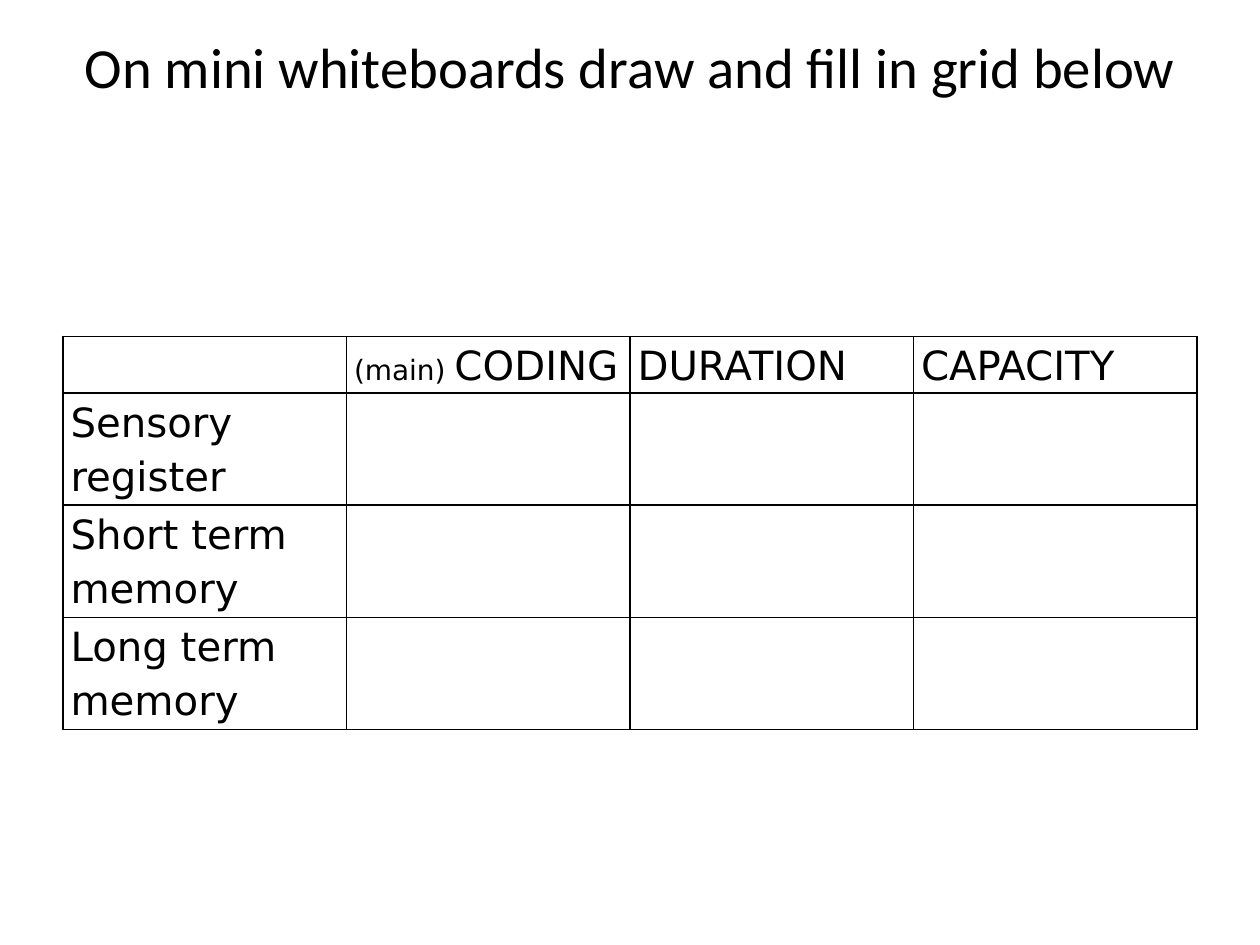
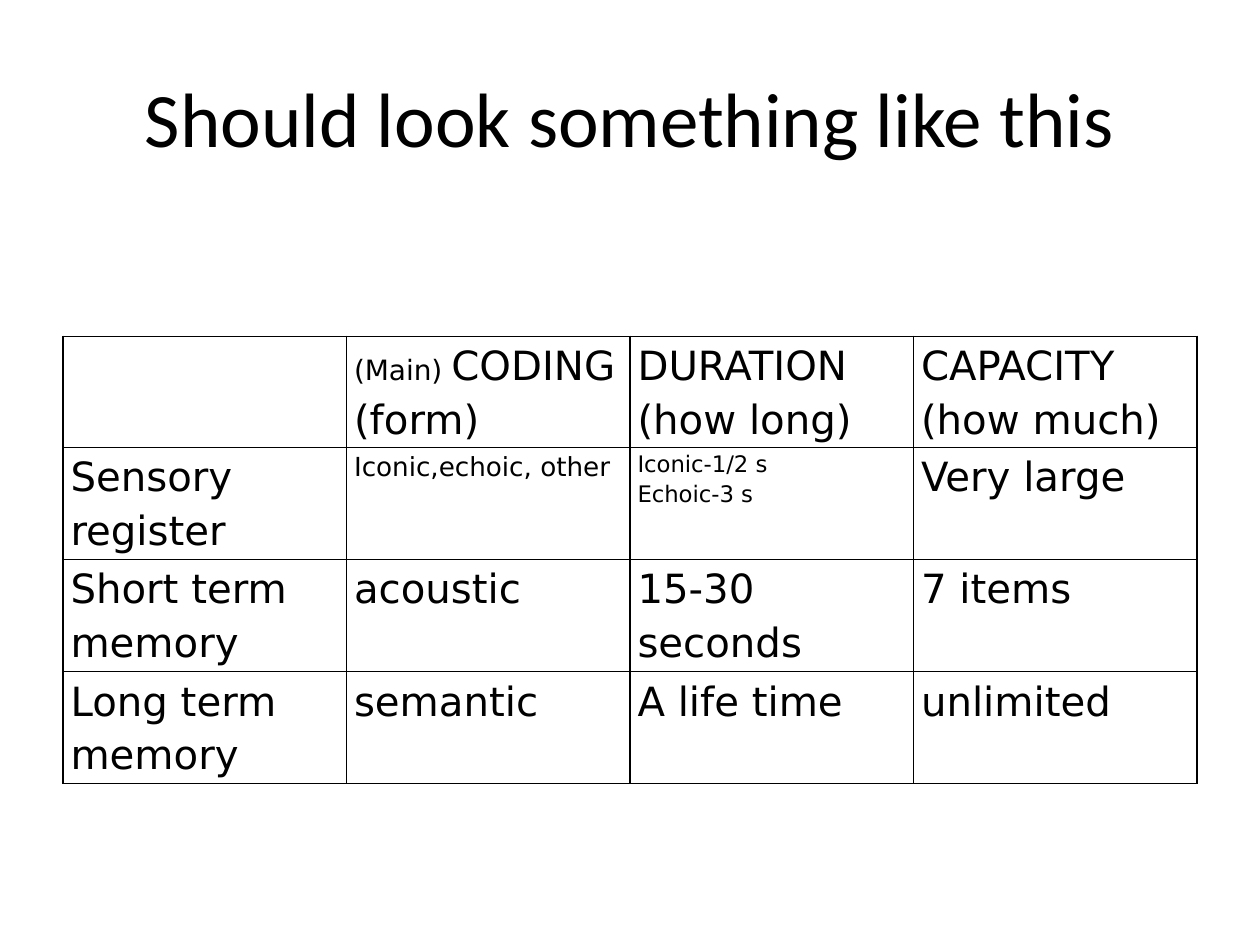
from lxml import etree
from pptx import Presentation
from pptx.dml.color import RGBColor
from pptx.enum.text import MSO_ANCHOR, PP_ALIGN
from pptx.oxml.ns import qn
from pptx.util import Inches, Pt

CENTER = PP_ALIGN.CENTER
MIDDLE = MSO_ANCHOR.MIDDLE

COLORS = {"ink": "000000", "paper": "FFFFFF"}
TITLE_FONT = "Calibri"
TABLE_FONT = "DejaVu Sans"
CELL_SIZE = 23
MARGIN = 0.5
CONTENT_WIDTH = 9
TABLE_TOP = 2.67
ROW_HEIGHTS = [0.45, 0.89, 0.89, 0.89]
BORDER_WIDTH = 1
STORES = ["Sensory register", "Short term memory", "Long term memory"]


def lines(text, size=CELL_SIZE):
    return [[(line, size)] for line in text.split("\n")]


def coding_heading(prefix, heading):
    return [[(prefix, 16), (heading, CELL_SIZE)]]


class MemoryDeck:
    def __init__(self):
        self.deck = Presentation()
        self.deck.slide_width = Inches(10)
        self.deck.slide_height = Inches(7.5)
        self.page = None

    def new_page(self):
        self.page = self.deck.slides.add_slide(self.deck.slide_layouts[6])
        fill = self.page.background.fill
        fill.solid()
        fill.fore_color.rgb = RGBColor.from_string(COLORS["paper"])

    def style_span(self, span, font, size):
        span.font.name = font
        span.font.size = Pt(size)
        span.font.color.rgb = RGBColor.from_string(COLORS["ink"])

    def title(self, text, top, height, size):
        box = self.page.shapes.add_textbox(
            Inches(MARGIN), Inches(top), Inches(CONTENT_WIDTH), Inches(height))
        frame = box.text_frame
        frame.word_wrap = True
        frame.vertical_anchor = MIDDLE
        frame.text = text
        para = frame.paragraphs[0]
        para.alignment = CENTER
        self.style_span(para.runs[0], TITLE_FONT, size)

    def border(self, cell):
        properties = cell._tc.get_or_add_tcPr()
        for side in ("lnL", "lnR", "lnT", "lnB"):
            line = etree.SubElement(properties, qn(f"a:{side}"), w=str(Pt(BORDER_WIDTH)))
            fill = etree.SubElement(line, qn("a:solidFill"))
            etree.SubElement(fill, qn("a:srgbClr"), val=COLORS["ink"])

    def fill_cell(self, cell, paragraphs):
        cell.margin_left = cell.margin_right = Inches(0.06)
        cell.margin_top = cell.margin_bottom = 0
        frame = cell.text_frame
        for index, spans in enumerate(paragraphs):
            para = frame.add_paragraph() if index else frame.paragraphs[0]
            para.line_spacing = 1.15
            for text, size in spans:
                span = para.add_run()
                span.text = text
                self.style_span(span, TABLE_FONT, size)

    def memory_table(self, headings, answers):
        rows = [["", *headings]]
        rows += [[store, *row] for store, row in zip(STORES, answers)]
        column_count = len(rows[0])
        table = self.page.shapes.add_table(
            len(rows), column_count, Inches(MARGIN), Inches(TABLE_TOP),
            Inches(CONTENT_WIDTH), Inches(sum(ROW_HEIGHTS))).table
        table.first_row = table.horz_banding = False
        for column in table.columns:
            column.width = Inches(CONTENT_WIDTH / column_count)
        for row_index, row in enumerate(rows):
            table.rows[row_index].height = Inches(ROW_HEIGHTS[row_index])
            for column_index, content in enumerate(row):
                cell = table.cell(row_index, column_index)
                self.border(cell)
                cell.fill.background()
                if content:
                    paragraphs = lines(content) if isinstance(content, str) else content
                    self.fill_cell(cell, paragraphs)


def main():
    memory = MemoryDeck()

    memory.new_page()
    memory.title("On mini whiteboards draw and fill in grid below", 0.1, 0.85, 32.4)
    memory.memory_table(
        [coding_heading("(main) ", "CODING"), "DURATION", "CAPACITY"],
        [[""] * 3 for store in STORES])

    memory.new_page()
    memory.title("Should look something like this", 0.3, 1.25, 44)
    memory.memory_table(
        [coding_heading("(Main) ", "CODING (form)"),
         "DURATION\n(how long)", "CAPACITY\n(how much)"],
        [[lines("Iconic,echoic, other", 15),
          lines("Iconic-1/2 s\nEchoic-3 s", 13), "Very large"],
         ["acoustic", "15-30 seconds", "7 items"],
         ["semantic", "A life time", "unlimited"]])

    memory.deck.save("out.pptx")


if __name__ == "__main__":
    main()
